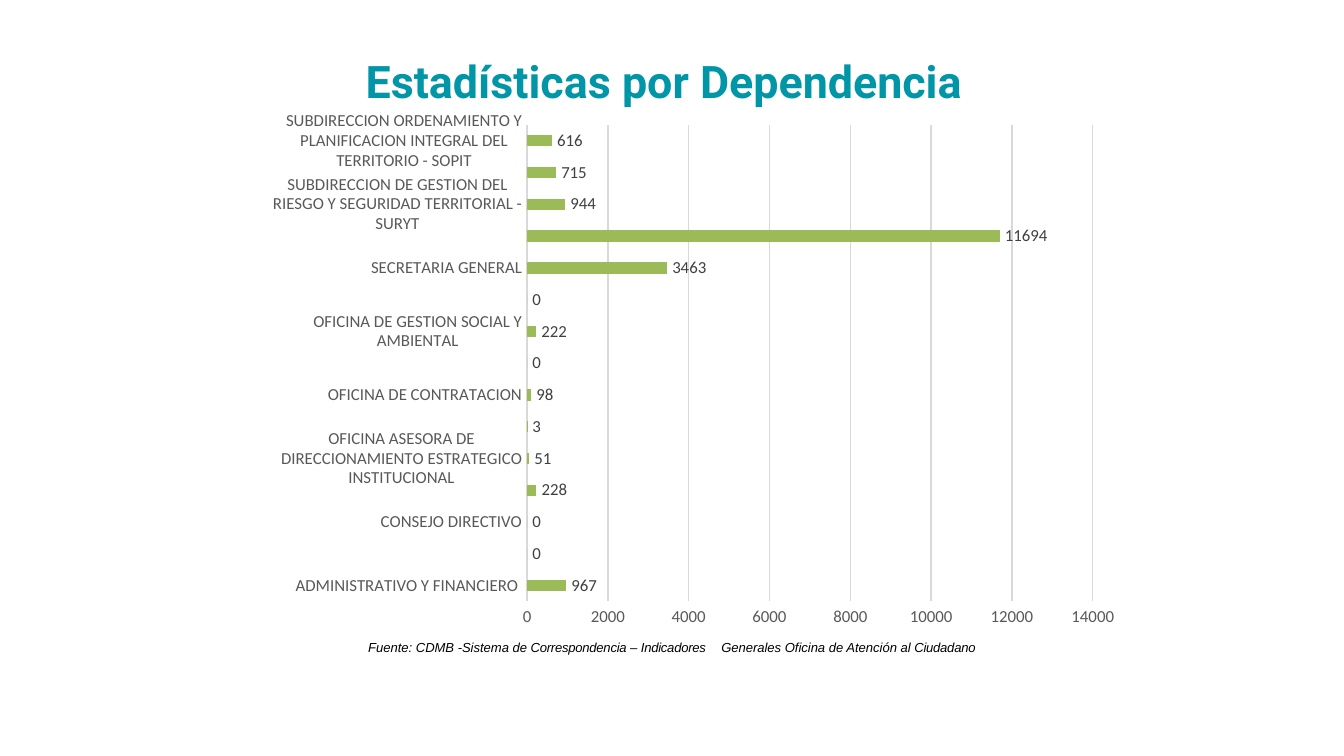
import pptx
import pptx.chart.data
import pptx.dml.color
import pptx.enum.chart
import pptx.enum.text
import pptx.util

Inches = pptx.util.Inches
Pt = pptx.util.Pt

COLORS = {
    "title": "0096A7",
    "text": "000000",
    "bar": "9BBB59",
    "axis": "595959",
    "grid": "D9D9D9",
    "label": "404040",
}

DEPARTMENTS = [
    ("ADMINISTRATIVO Y FINANCIERO ", 967),
    ("ASAMBLEA GENERAL", 0),
    ("CONSEJO DIRECTIVO", 0),
    ("DIRECCION GENERAL", 228),
    ("OFICINA ASESORA DE DIRECCIONAMIENTO ESTRATEGICO INSTITUCIONAL", 51),
    ("OFICINA CONTROL INTERNO", 3),
    ("OFICINA DE CONTRATACION", 98),
    ("OFICINA DE CONTROL DISCIPLINARIO INTERNO", 0),
    ("OFICINA DE GESTION SOCIAL Y AMBIENTAL", 222),
    ("REVISORA FISCAL", 0),
    ("SECRETARIA GENERAL", 3463),
    ("SUBDIRECCION DE EVALUACION Y CONTROL AMBIENTAL", 11694),
    ("SUBDIRECCION DE GESTION DEL RIESGO Y SEGURIDAD TERRITORIAL - SURYT", 944),
    ("SUBDIRECCION DE GESTION INTEGRAL DE LA OFERTA AMBIENTAL- SUGOA", 715),
    ("SUBDIRECCION ORDENAMIENTO Y PLANIFICACION INTEGRAL DEL TERRITORIO - SOPIT", 616),
]

SOURCE_RUNS = [
    ("Fuente: CDMB ", 0),
    ("-", -0.2),
    ("Sistema de ", 0),
    ("Correspondencia ", -0.1),
    ("– ", 0),
    ("Indicadores", -0.1),
    (" ", 6.3),
    ("Generales Oficina de Atención al ", 0),
    ("Ciudadano", -0.1),
]


class SlideBuilder:
    def __init__(self, prs):
        self.slide = prs.slides.add_slide(prs.slide_layouts[5])

    def color(self, name):
        return pptx.dml.color.RGBColor.from_string(COLORS[name])

    def style(self, font, name, size, color, bold=False, italic=False):
        font.name = name
        font.size = Pt(size)
        font.bold = bold
        font.italic = italic
        font.color.rgb = self.color(color)

    def frame(self, sp):
        tf = sp.text_frame
        tf.word_wrap = True
        tf.auto_size = pptx.enum.text.MSO_AUTO_SIZE.SHAPE_TO_FIT_TEXT
        tf.vertical_anchor = pptx.enum.text.MSO_ANCHOR.TOP
        tf.margin_left = tf.margin_top = tf.margin_right = tf.margin_bottom = 0
        tf.paragraphs[0].alignment = pptx.enum.text.PP_ALIGN.LEFT
        return tf

    def title(self, text, left, top, width, height):
        sp = self.slide.shapes.title
        sp.left, sp.top = Inches(left), Inches(top)
        sp.width, sp.height = Inches(width), Inches(height)
        r = self.frame(sp).paragraphs[0].add_run()
        r.text = text
        self.style(r.font, "Roboto", 24, "title", bold=True)

    def source(self, runs, left, top, width, height):
        sp = self.slide.shapes.add_textbox(
            Inches(left), Inches(top), Inches(width), Inches(height))
        tf = self.frame(sp)
        tf.margin_top = tf.margin_left = Inches(0.02)
        p = tf.paragraphs[0]
        for text, spacing in runs:
            r = p.add_run()
            r.text = text
            self.style(r.font, "Arial", 7, "text", italic=True)
            r.font._element.set("spc", str(round(spacing * 100)))

    def axis(self, axis):
        axis.major_tick_mark = pptx.enum.chart.XL_TICK_MARK.NONE
        axis.minor_tick_mark = pptx.enum.chart.XL_TICK_MARK.NONE
        self.style(axis.tick_labels.font, "Calibri", 9, "axis")

    def line(self, line):
        line.color.rgb = self.color("grid")
        line.width = Pt(0.75)

    def bar_chart(self, rows, left, top, width, height):
        data = pptx.chart.data.CategoryChartData()
        data.categories = [name for name, value in rows]
        data.add_series("Series 1", [value for name, value in rows])
        chart = self.slide.shapes.add_chart(
            pptx.enum.chart.XL_CHART_TYPE.BAR_CLUSTERED,
            Inches(left), Inches(top), Inches(width), Inches(height), data).chart
        chart.has_title = False
        chart.has_legend = False
        self.style(chart.font, "Calibri", 10, "text")

        self.axis(chart.category_axis)
        self.line(chart.category_axis.format.line)
        values = chart.value_axis
        self.axis(values)
        values.minimum_scale, values.maximum_scale = 0, 14000
        values.major_unit = 2000
        values.format.line.fill.background()
        values.has_major_gridlines = True
        self.line(values.major_gridlines.format.line)

        plot = chart.plots[0]
        plot.gap_width = 182
        plot.vary_by_categories = False
        series = plot.series[0]
        series.format.fill.solid()
        series.format.fill.fore_color.rgb = self.color("bar")
        labels = series.data_labels
        labels.show_value = True
        labels.position = pptx.enum.chart.XL_LABEL_POSITION.OUTSIDE_END
        self.style(labels.font, "Calibri", 9, "label")


def main():
    prs = pptx.Presentation()
    prs.slide_width = Inches(10)
    prs.slide_height = prs.slide_width * 9 // 16
    s = SlideBuilder(prs)
    s.source(SOURCE_RUNS, 2.72, 4.74, 5.33, 0.13)
    s.title("Estadísticas por Dependencia", 2.72, 0.4, 5.38, 0.4)
    s.bar_chart(DEPARTMENTS, 1.9, 0.75, 6.52, 3.99)
    prs.save("out.pptx")


if __name__ == "__main__":
    main()
